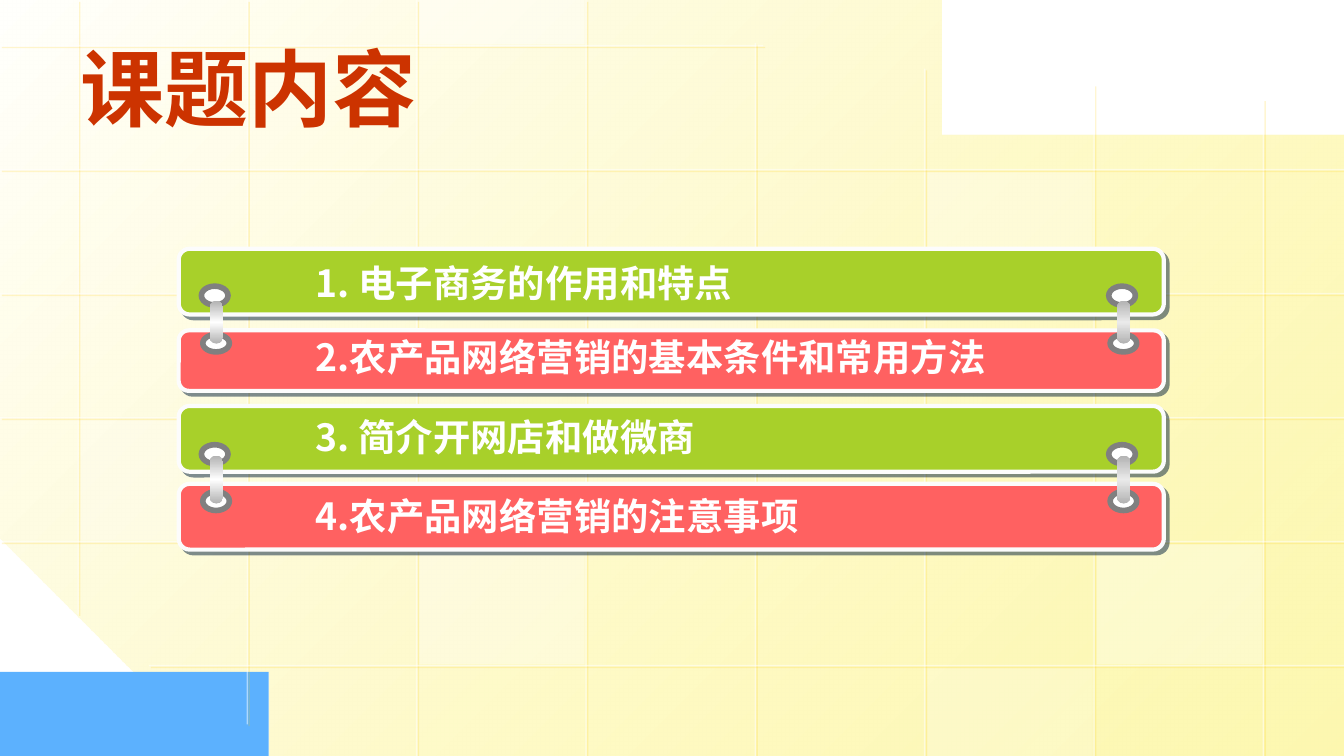
from lxml.etree import SubElement
from pptx import Presentation
from pptx.dml.color import RGBColor
from pptx.enum.shapes import MSO_CONNECTOR, MSO_SHAPE as SHAPE
from pptx.enum.text import MSO_ANCHOR as ANCHOR, MSO_AUTO_SIZE as AUTO
from pptx.oxml.ns import qn
from pptx.util import Inches, Pt

W, H = 10, 5.625
FONT = "Noto Sans CJK SC"
COLORS = {
    "white": "FFFFFF", "cream": "FFFFFC", "yellow": "FDF58D", "gold": "FFCC00",
    "blue": "5CB1FE", "title": "CC3300", "green": "A8D02A", "red": "FF6161",
    "edge": "FCFCFC", "ring": "808080", "shadow": "001D3A",
    "steel": "B2B2B2", "shine": "EAEAEA",
}


def rgb(name):
    return RGBColor.from_string(COLORS[name])


def inside(box, left, top, width, height):
    """Sub-box given in percent of the box around it."""
    x, y, w, h = box
    return x + w * left / 100, y + h * top / 100, w * width / 100, h * height / 100


def emu(box):
    return [Inches(v) for v in box]


def add_color(parent, name, alpha=100):
    color = SubElement(parent, qn("a:srgbClr"), val=COLORS[name])
    if alpha < 100:
        SubElement(color, qn("a:alpha"), val=str(alpha * 1000))


def add_shadow(effects, name, alpha, distance):
    outer = SubElement(effects, qn("a:outerShdw"), blurRad="0", dist=str(Pt(distance)),
                       dir="2700000", algn="ctr", rotWithShape="0")
    add_color(outer, name, alpha)


def fill_gradient(shape, stops, angle):
    shape.fill.background()
    empty = shape.element.spPr.find(qn("a:noFill"))
    grad = SubElement(shape.element.spPr, qn("a:gradFill"), rotWithShape="1")
    stop_list = SubElement(grad, qn("a:gsLst"))
    for position, name, alpha in stops:
        add_color(SubElement(stop_list, qn("a:gs"), pos=str(position * 1000)), name, alpha)
    SubElement(grad, qn("a:lin"), ang=str(angle * 60000), scaled="0")
    shape.element.spPr.replace(empty, grad)


def style(shape, fill=None, alpha=100, line=None, width=0, shadow=None):
    shape.shadow.inherit = False
    if fill:
        shape.fill.solid()
        shape.fill.fore_color.rgb = rgb(fill)
        if alpha < 100:
            color = shape.element.spPr.find(qn("a:solidFill"))[0]
            SubElement(color, qn("a:alpha"), val=str(alpha * 1000))
    if line:
        shape.line.color.rgb = rgb(line)
        shape.line.width = Pt(width)
    else:
        shape.line.fill.background()
    if shadow:
        add_shadow(shape.element.spPr.find(qn("a:effectLst")), *shadow)
    return shape


def add_text(slide, box, text, *, size, color, shadow, anchor=ANCHOR.TOP,
             auto_size=AUTO.NONE, hanging=0):
    frame = slide.shapes.add_textbox(*emu(box)).text_frame
    frame.word_wrap, frame.auto_size, frame.vertical_anchor = True, auto_size, anchor
    paragraph = frame.paragraphs[0]
    if hanging:
        props = paragraph._p.get_or_add_pPr()
        props.set("marL", str(Inches(hanging)))
        props.set("indent", str(-Inches(hanging)))
    run = paragraph.add_run()
    run.text = text
    font = run.font
    font.size, font.bold, font.name = Pt(size), True, FONT
    font.color.rgb = rgb(color)
    run_props = run._r.get_or_add_rPr()
    SubElement(run_props, qn("a:ea"), typeface=FONT)
    effects = SubElement(run_props, qn("a:effectLst"))
    add_shadow(effects, *shadow)
    run_props.find(qn("a:solidFill")).addnext(effects)


def curve(start, first, second, end, steps=40):
    """Points of a cubic Bezier curve, start included."""
    for i in range(steps + 1):
        t = i / steps
        u = 1 - t
        yield tuple(u**3 * a + 3 * u * u * t * b + 3 * u * t * t * c + t**3 * d
                    for a, b, c, d in zip(start, first, second, end))


def add_outline(slide, points):
    builder = slide.shapes.build_freeform(*points[0], scale=Inches(1))
    builder.add_line_segments(points[1:], close=True)
    return style(builder.convert_to_shape())


def add_backdrop(slide, box):
    x, y, w, h = box
    right, bottom = x + w, y + h
    # Yellow sheet with a curved top edge and a curved lower left corner
    corner = curve((2.3, bottom), (0.86, 4.95), (x, 4.04), (x, 4.04))
    brow = curve((4.21, y), (4.21, 0.01), (5.37, 0.52), (right, 0.78))
    sheet = add_outline(slide, [(right, bottom), *corner, (x, y), *brow])
    fill_gradient(sheet, [(0, "cream", 100), (100, "yellow", 70)], 45)
    # Blue corner
    edge = curve((2.03, bottom), (2.03, bottom), (1.12, 5.32), (0.01, 4.19))
    style(add_outline(slide, [(0.01, bottom), *edge]), "blue")


def add_grid(slide, box):
    x, y, w, h = box
    right, bottom = x + w, y + h
    col, row = w * 0.126, h * 0.164
    first_x, first_y = x + 0.58, y + 0.34
    # Line ends follow the curved edges of the sheet
    column_ends = [(y, 4.57), (y, 5.39), (y, bottom), (y, bottom),
                   (0.32, bottom), (0.51, bottom), (0.63, bottom), (0.74, bottom)]
    row_ends = [(x, 5.68), *[(x, right)] * 4, (1.11, right)]
    lines = [(first_x + i * col, a, first_x + i * col, b)
             for i, (a, b) in enumerate(column_ends)]
    lines += [(b, first_y + j * row, a, first_y + j * row)
              for j, (a, b) in enumerate(row_ends)]
    for ends in lines:
        rule = slide.shapes.add_connector(MSO_CONNECTOR.STRAIGHT, *emu(ends))
        rule.line.color.rgb = rgb("white")
        rule.line.width = Pt(0.75)
        props = rule.element.spPr
        color = props.find(qn("a:ln")).find(qn("a:solidFill"))[0]
        SubElement(color, qn("a:alpha"), val="50000")
        add_shadow(SubElement(props, qn("a:effectLst")), "gold", 35, 1.4)
    # Pale tiles: column, row, opacity
    for i, j, alpha in [(3, 2, 25), (6, 4, 30), (0, 3, 20), (5, 5, 20),
                        (2, -1, 40), (2, 4, 30), (5, 1, 30)]:
        left, top = first_x + i * col + 0.02, first_y + j * row + 0.02
        end = min(top + row - 0.03, bottom)
        top = max(top, y)
        tile = slide.shapes.add_shape(
            SHAPE.RECTANGLE, *emu((left, top, col - 0.03, end - top)))
        style(tile, "white", alpha)


def add_bar(slide, box, text, color, text_top, text_height, ring_top, pin=None):
    shapes = slide.shapes
    bar = shapes.add_shape(SHAPE.ROUNDED_RECTANGLE, *emu(box))
    style(bar, color, line="edge", width=2.25, shadow=("shadow", 50, 2.8))
    # Rings, and the pins that tie the bar to the one above
    nudge = 0.14 if pin else 0
    for left, middle in [(94.4, "shine"), (2.3, "white")]:
        left += nudge
        ring = shapes.add_shape(SHAPE.OVAL, *emu(inside(box, left, ring_top, 2.7, 28.6)))
        style(ring, "white", line="ring", width=3)
        if pin:
            top, height = pin
            tie = shapes.add_shape(SHAPE.ROUNDED_RECTANGLE,
                                   *emu(inside(box, left + 0.7, top, 1.36, height)))
            tie.adjustments[0] = 0.5
            fill_gradient(style(tie), [(0, "steel", 100), (50, middle, 100),
                                       (100, "steel", 100)], 90)
    add_text(slide, inside(box, 12.55, text_top, 75, text_height), text, size=20,
             color="white", shadow=("shadow", 50, 2), hanging=0.5,
             auto_size=AUTO.SHAPE_TO_FIT_TEXT)


def add_topics(slide, box):
    # Top and height in percent of the box, then the parts of each bar
    topics = [
        (32.9, 8.7, "1. 电子商务的作用和特点", "green", 8, 90, 57),
        (43.7, 8, "2.农产品网络营销的基本条件和常用方法", "red", -4, 98, 7, (-49, 71)),
        (53.7, 8.7, "3. 简介开网店和做微商", "green", 2, 90, 59),
        (64, 8.7, "4.农产品网络营销的注意事项", "red", 4, 192, 12, (-43, 73)),
    ]
    for top, height, *parts in topics:
        add_bar(slide, inside(box, 13.3, top, 73.3, height), *parts)


def main():
    deck = Presentation()
    deck.slide_width, deck.slide_height = Inches(W), Inches(H)
    slide = deck.slides.add_slide(deck.slide_layouts[6])
    page = (0, 0, W, H)
    add_backdrop(slide, page)
    add_grid(slide, page)
    add_text(slide, inside(page, 5, 4.8, 90, 13.5), "课题内容", size=45, color="title",
             shadow=("white", 100, 2), anchor=ANCHOR.MIDDLE)
    add_topics(slide, page)
    deck.save("out.pptx")


if __name__ == "__main__":
    main()
